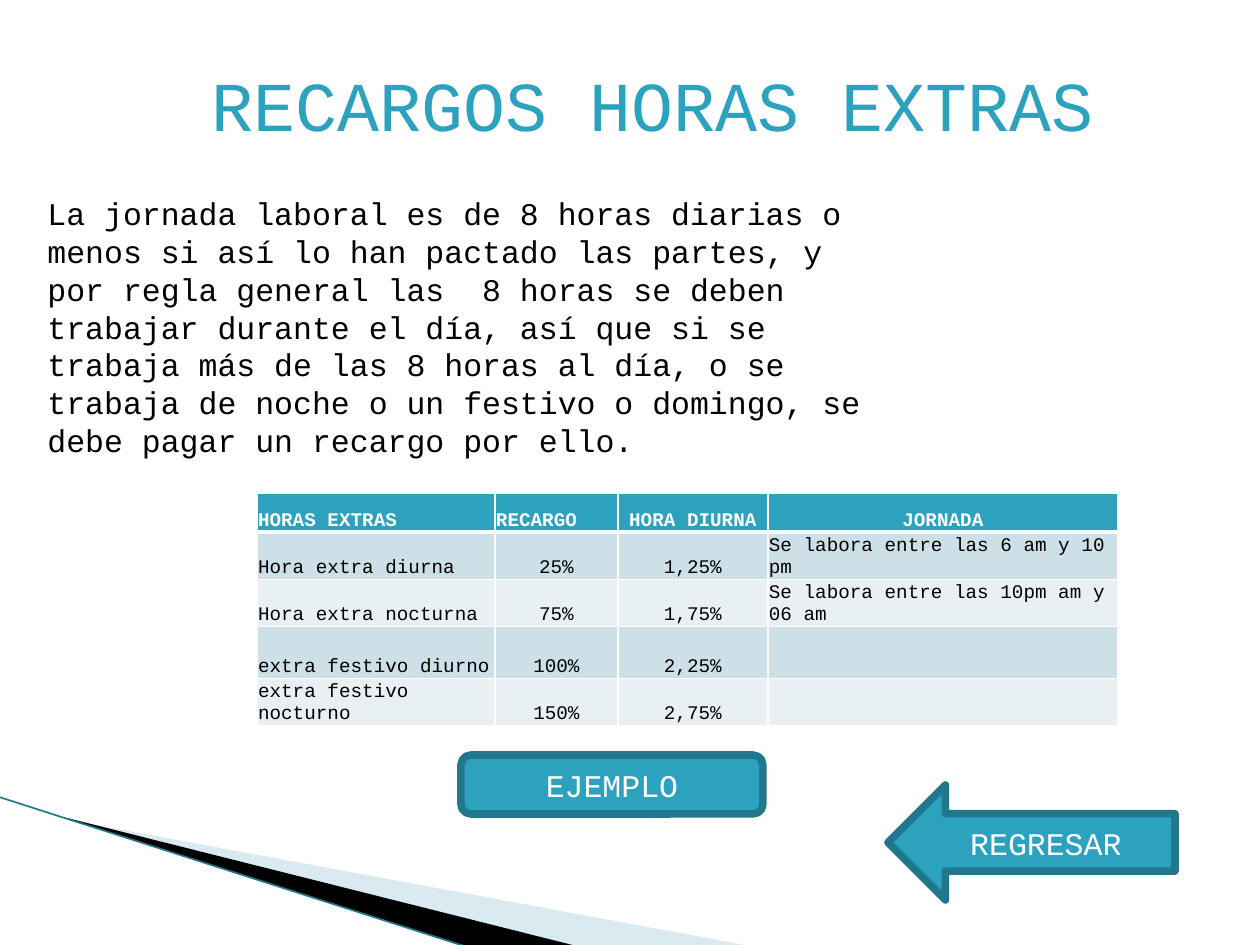
"""Build the slide on overtime surcharges."""
from dataclasses import dataclass

from lxml.etree import SubElement
from pptx import Presentation
from pptx.dml.color import RGBColor
from pptx.enum.shapes import MSO_CONNECTOR, MSO_SHAPE
from pptx.enum.text import MSO_ANCHOR, MSO_AUTO_SIZE, PP_ALIGN
from pptx.oxml.ns import qn
from pptx.util import Emu, Pt

EMU_PER_PX = 914400 / 126


def px(length):
    return Emu(round(length * EMU_PER_PX))


@dataclass(frozen=True)
class Theme:
    font: str = "Courier New"
    accent: str = "2DA2BF"
    outline: str = "21788D"
    pale: str = "A0CBDC"
    band_dark: str = "CDE0E8"
    band_light: str = "E8F0F4"
    black: str = "000000"
    white: str = "FFFFFF"
    title_size: int = 40
    body_size: int = 18
    table_size: int = 11


class SlideBuilder:
    def __init__(self, slide, theme):
        self.shapes = slide.shapes
        self.theme = theme

    def style(self, paragraph, size, color, align=PP_ALIGN.LEFT, bold=False):
        paragraph.alignment = align
        font = paragraph.font
        font.name, font.size, font.bold = self.theme.font, Pt(size), bold
        font.color.rgb = RGBColor.from_string(color)

    def fill(self, target, color):
        target.fill.solid()
        target.fill.fore_color.rgb = RGBColor.from_string(color)

    def freeform(self, points, color, opacity=100):
        builder = self.shapes.build_freeform(*points[0], scale=EMU_PER_PX)
        builder.add_line_segments(points[1:], close=True)
        shape = builder.convert_to_shape()
        shape.shadow.inherit = False
        shape.line.fill.background()
        self.fill(shape, color)
        if opacity < 100:
            color_element = shape._element.spPr.find(qn("a:solidFill"))[0]
            SubElement(color_element, qn("a:alpha"), val=str(opacity * 1000))

    def line(self, start, end, color, width):
        connector = self.shapes.add_connector(
            MSO_CONNECTOR.STRAIGHT, *map(px, start + end))
        connector.line.color.rgb = RGBColor.from_string(color)
        connector.line.width = Pt(width)
        SubElement(connector._element.spPr, qn("a:effectLst"))

    def text(self, box, content, size, color, align=PP_ALIGN.LEFT, wrap=True):
        frame = self.shapes.add_textbox(*map(px, box)).text_frame
        frame.word_wrap = wrap
        frame.auto_size = MSO_AUTO_SIZE.SHAPE_TO_FIT_TEXT
        paragraph = frame.paragraphs[0]
        paragraph.text = content
        self.style(paragraph, size, color, align)

    def button(self, preset, box, label):
        shape = self.shapes.add_shape(preset, *map(px, box))
        shape.shadow.inherit = False
        self.fill(shape, self.theme.accent)
        shape.line.color.rgb = RGBColor.from_string(self.theme.outline)
        shape.line.width = Pt(4.33)
        frame = shape.text_frame
        frame.vertical_anchor = MSO_ANCHOR.MIDDLE
        paragraph = frame.paragraphs[0]
        paragraph.text = label
        self.style(paragraph, self.theme.body_size, self.theme.white, PP_ALIGN.CENTER)

    def borders(self, cell, widths):
        properties = cell._tc.get_or_add_tcPr()
        for index, (side, width) in enumerate(widths.items()):
            border = properties.makeelement(qn(f"a:{side}"), {"w": str(Pt(width))})
            solid = SubElement(border, qn("a:solidFill"))
            SubElement(solid, qn("a:srgbClr"), val=self.theme.white)
            properties.insert(index, border)

    def table(self, box, widths, heights, rows, centered):
        theme = self.theme
        table = self.shapes.add_table(len(rows), len(widths), *map(px, box)).table
        for column, width in zip(table.columns, widths):
            column.width = px(width)
        for row, height in zip(table.rows, heights):
            row.height = px(height)
        for row_index, values in enumerate(rows):
            header = row_index == 0
            band = theme.band_dark if row_index % 2 else theme.band_light
            for column_index, value in enumerate(values):
                cell = table.cell(row_index, column_index)
                cell.margin_left = cell.margin_right = cell.margin_top = px(1)
                cell.margin_bottom = 0
                cell.vertical_anchor = MSO_ANCHOR.BOTTOM
                self.fill(cell, theme.accent if header else band)
                self.borders(cell, {"lnL": 1, "lnR": 1,
                                    "lnT": 3 if row_index == 1 else 1,
                                    "lnB": 3 if header else 1})
                paragraph = cell.text_frame.paragraphs[0]
                paragraph.text = value
                middle = column_index in centered[0 if header else 1]
                self.style(paragraph, theme.table_size,
                           theme.white if header else theme.black,
                           PP_ALIGN.CENTER if middle else PP_ALIGN.LEFT, header)


def main():
    theme = Theme()
    presentation = Presentation()
    presentation.slide_width, presentation.slide_height = px(1260), px(945)
    slide = presentation.slides.add_slide(presentation.slide_layouts[6])
    builder = SlideBuilder(slide, theme)

    builder.freeform([(69, 820), (750, 946), (575, 946), (69, 819)], theme.pale, 40)
    builder.freeform([(67, 818), (576, 946), (469, 947), (68, 819)], theme.black)
    builder.line((-1, 797), (467, 947), theme.outline, 0.95)

    builder.text((184, 55, 936, 97), "RECARGOS HORAS EXTRAS", theme.title_size,
                 theme.accent, PP_ALIGN.CENTER, wrap=False)
    builder.text(
        (35, 188, 853, 242),
        "La jornada laboral es de 8 horas diarias o menos si así lo han pactado "
        "las partes, y por regla general las  8 horas se deben trabajar durante "
        "el día, así que si se trabaja más de las 8 horas al día, o se trabaja de "
        "noche o un festivo o domingo, se debe pagar un recargo por ello.",
        theme.body_size, theme.black)

    builder.table(
        (257, 493, 861, 218), (238, 123, 150, 350), (39, 39, 26, 52, 39),
        [("HORAS EXTRAS", "RECARGO", "HORA DIURNA", "JORNADA"),
         ("Hora extra diurna", "25%", "1,25%", "Se labora entre las 6 am y 10 pm"),
         ("Hora extra nocturna", "75%", "1,75%", "Se labora entre las 10pm am y 06 am"),
         ("extra festivo diurno", "100%", "2,25%", ""),
         ("extra festivo nocturno", "150%", "2,75%", "")],
        centered=((2, 3), (1, 2)))

    builder.button(MSO_SHAPE.ROUNDED_RECTANGLE, (461, 755, 302, 59), "EJEMPLO")
    builder.button(MSO_SHAPE.LEFT_ARROW, (888, 785, 287, 115), "REGRESAR")
    presentation.save("out.pptx")


if __name__ == "__main__":
    main()
